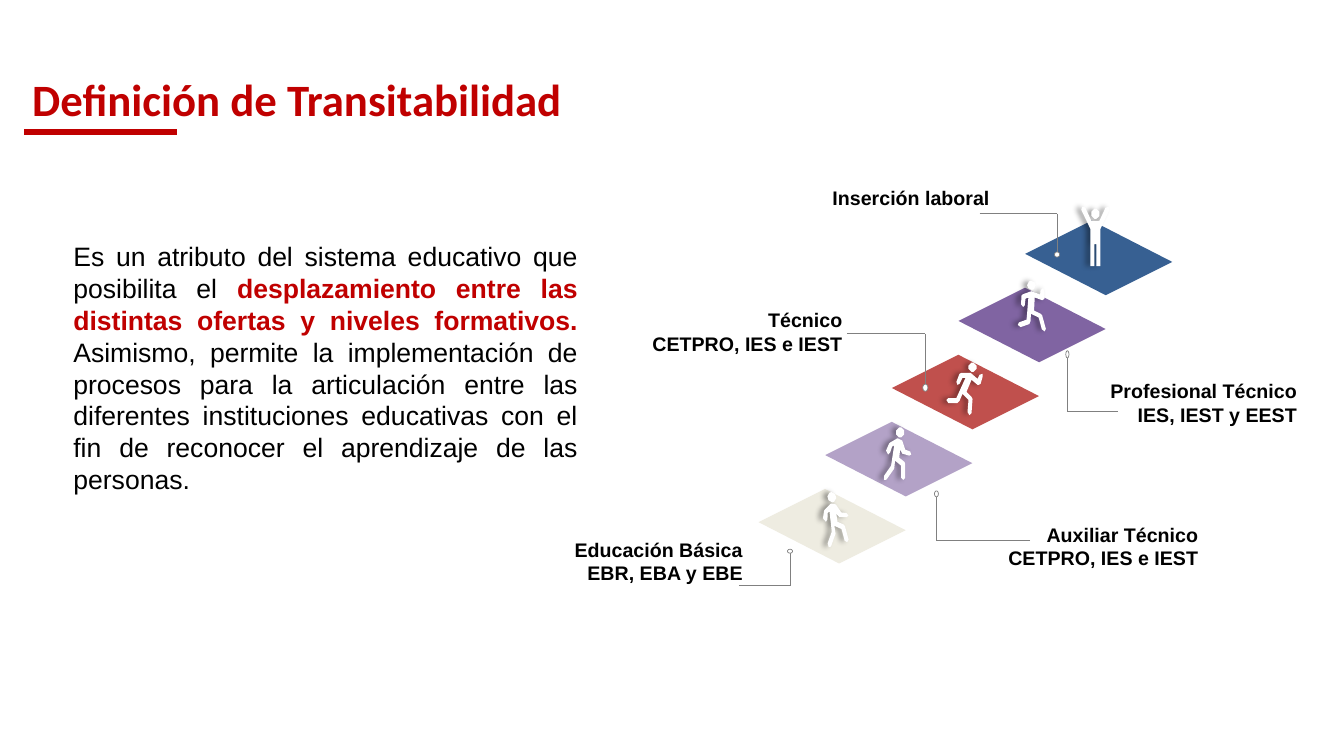
from math import cos, pi, sin

from lxml.etree import SubElement
from pptx import Presentation
from pptx.dml.color import RGBColor
from pptx.enum.shapes import MSO_CONNECTOR, MSO_SHAPE
from pptx.enum.text import MSO_ANCHOR, PP_ALIGN
from pptx.oxml.ns import qn
from pptx.util import Cm, Pt

RED, GREY, WHITE, BLACK = "C00000", "808080", "FFFFFF", "000000"
UNIT = Cm(2.54) / 100  # outline points are hundredths of an inch
hue = RGBColor.from_string

deck = Presentation()
deck.slide_width, deck.slide_height = Cm(33.87), Cm(19.05)
slide = deck.slides.add_slide(deck.slide_layouts[6])
shapes = slide.shapes


def rule(x1, y1, x2, y2, color, width):
    """Draw a straight line without a shadow."""
    line = shapes.add_connector(
        MSO_CONNECTOR.STRAIGHT, Cm(x1), Cm(y1), Cm(x2), Cm(y2))
    line.line.color.rgb = hue(color)
    line.line.width = Pt(width)
    SubElement(line._element.spPr, qn("a:effectLst"))


def write(box, paras, font, size, anchor, align, space, inset=0.25):
    """Add a text box; each paragraph is a list of (text, color, bold) runs."""
    frame = shapes.add_textbox(*map(Cm, box)).text_frame
    frame.word_wrap = True
    frame.vertical_anchor = anchor
    frame.margin_left = frame.margin_right = Cm(inset)
    for i, runs in enumerate(paras):
        para = frame.add_paragraph() if i else frame.paragraphs[0]
        para.alignment = align
        para.line_spacing = space
        for words, color, bold in runs:
            run = para.add_run()
            run.text = words
            run.font.name, run.font.size = font, Pt(size)
            run.font.bold = bold
            run.font.color.rgb = hue(color)


# Title and definition
write((0.56, 1.57, 14.02, 2.01), [[("Definición de Transitabilidad", RED, True)]],
      "Calibri", 32, MSO_ANCHOR.MIDDLE, PP_ALIGN.LEFT, 0.9)
rule(0.61, 3.33, 4.47, 3.33, RED, 4.5)
definition = [
    ("Es un atributo del sistema educativo que posibilita el ", BLACK, False),
    ("desplazamiento entre las distintas ofertas y niveles formativos.", RED, True),
    (" Asimismo, permite la implementación de procesos para la articulación "
     "entre las diferentes instituciones educativas con el fin de reconocer "
     "el aprendizaje de las personas.", BLACK, False),
]
write((1.6, 5.92, 13.21, 7.57), [definition],
      "Arial", 19, MSO_ANCHOR.TOP, PP_ALIGN.JUSTIFY, Pt(22.8))

# Each figure: body outline, then head centre and radii
walker = ([
    (14, 11), (18, 13), (21, 22), (26, 24), (27, 27), (25, 28), (18, 26),
    (16, 22), (15, 30), (20, 34), (21, 36), (21, 50), (19, 52), (17, 50),
    (17, 38), (11, 33), (10, 41), (3, 51), (2, 52), (0, 52), (0, 48),
    (7, 38), (10, 18), (8, 19), (6, 25), (4, 27), (2, 23), (5, 16), (6, 15),
    (13, 11)], (16, 5, 4, 5))
runner = ([
    (15, 10), (24, 10), (31, 16), (33, 12), (36, 11), (36, 14), (34, 21),
    (32, 22), (31, 22), (25, 17), (20, 29), (25, 34), (26, 36), (25, 50),
    (23, 52), (21, 49), (22, 37), (16, 31), (13, 38), (11, 40), (2, 40),
    (0, 37), (2, 35), (10, 35), (19, 15), (16, 15), (13, 21), (11, 22),
    (10, 19), (13, 11)], (26, 4.5, 4, 4.5))
winner = ([
    (2, 0), (4, 1), (10, 14), (18, 14), (24, 1), (27, 0), (28, 3), (19, 22),
    (19, 59), (15, 59), (15, 37), (13, 37), (13, 59), (9, 59), (9, 22),
    (0, 3), (1, 0)], (14, 7, 4, 5))

# Rising steps: tile color, figure, figure left and top, turn
steps = [
    ("EEECE1", walker, 20.7, 12.4, 344.8),
    ("B3A2C7", walker, 22.28, 10.77, 0),
    ("C0504D", runner, 23.85, 9.14, 0),
    ("8064A2", runner, 25.53, 7.11, 340.4),
    ("376092", winner, 27.25, 5.21, 0),
]
for i, (color, (body, head), left, top, turn) in enumerate(steps):
    pen = shapes.build_freeform(-73, -4, scale=UNIT)
    pen.add_line_segments([(-7, -37), (73, 4), (7, 37)])
    tile = pen.convert_to_shape(Cm(20.97 + 1.68 * i), Cm(13.26 - 1.69 * i))

    pen = shapes.build_freeform(*body[0], scale=UNIT)
    pen.add_line_segments(body[1:])
    x, y, wide, high = head
    ring = [(x + wide * cos(k * pi / 10), y + high * sin(k * pi / 10))
            for k in range(20)]
    pen.move_to(*ring[0])
    pen.add_line_segments(ring[1:])
    figure = pen.convert_to_shape(Cm(left), Cm(top))
    figure.rotation = turn

    for shape, fill in ((tile, color), (figure, WHITE)):
        shape.shadow.inherit = False
        shape.fill.solid()
        shape.fill.fore_color.rgb = hue(fill)
        shape.line.fill.background()
    effects = figure._element.spPr.find(qn("a:effectLst"))
    shade = SubElement(effects, qn("a:outerShdw"), blurRad=str(Pt(4)),
                       dist=str(Pt(3)), dir="10800000", rotWithShape="0")
    tint = SubElement(shade, qn("a:srgbClr"), val=BLACK)
    SubElement(tint, qn("a:alpha"), val="40000")

# Labels: lines, box, alignment, elbow (start x, y, turn x, end y), dot size
RIGHT = PP_ALIGN.RIGHT
labels = [
    (["Educación Básica", "EBR, EBA y EBE"], (14.3, 13.41, 4.42, 1.45), RIGHT,
     (18.62, 14.76, 19.91, 13.94), (0.13, 0.1)),
    (["Auxiliar Técnico", "CETPRO, IES e IEST"], (24.94, 13.03, 5.26, 1.45), RIGHT,
     (25.96, 13.61, 23.6, 12.52), (0.1, 0.15)),
    (["Técnico", "CETPRO, IES e IEST"], (16.15, 7.62, 5.08, 1.45), RIGHT,
     (21.34, 8.41, 23.32, 9.68), (0.13, 0.18)),
    (["Profesional Técnico", "IES, IEST y EEST"], (26.21, 9.42, 6.48, 1.45), RIGHT,
     (28.17, 10.36, 26.9, 9.02), (0.08, 0.18)),
    (["Inserción laboral"], (20.98, 4.55, 5.79, 0.86), PP_ALIGN.JUSTIFY,
     (24.69, 5.38, 26.64, 6.35), (0.13, 0.13)),
]
for lines, box, align, (start, level, bend, end), (wide, high) in labels:
    rule(start, level, bend, level, GREY, 0.5)
    rule(bend, level, bend, end, GREY, 0.5)
    top = end if end > level else end - high
    dot = shapes.add_shape(MSO_SHAPE.OVAL, Cm(bend - wide / 2), Cm(top),
                           Cm(wide), Cm(high))
    dot.shadow.inherit = False
    dot.fill.solid()
    dot.fill.fore_color.rgb = hue(WHITE)
    dot.line.color.rgb = hue(GREY)
    dot.line.width = Pt(0.5)
    write(box, [[(line, BLACK, True)] for line in lines],
          "Arial", 14, MSO_ANCHOR.BOTTOM, align, Pt(16.8), 0)

deck.save("out.pptx")
